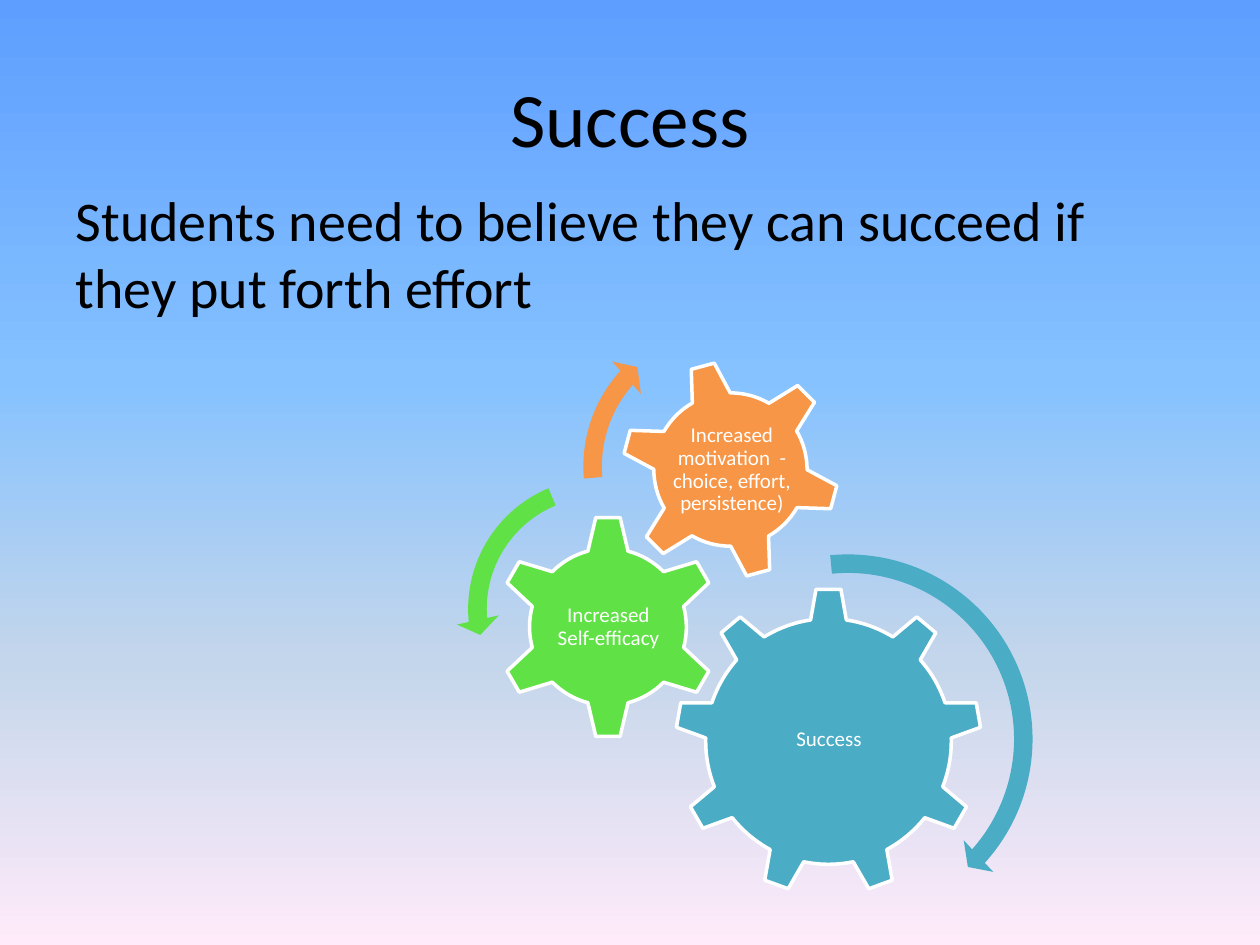
from copy import deepcopy

from pptx import Presentation
from pptx.dml.color import RGBColor as Rgb
from pptx.enum.shapes import MSO_SHAPE as Kind
from pptx.enum.text import MSO_ANCHOR as Anchor, PP_ALIGN as Align
from pptx.oxml.ns import qn
from pptx.oxml.xmlchemy import OxmlElement as Node
from pptx.util import Emu, Pt

SCALE = 914400 / 126
FONT = "Calibri"
BLACK = Rgb(0x00, 0x00, 0x00)
WHITE = Rgb(0xFF, 0xFF, 0xFF)
TEAL = Rgb(0x4B, 0xAC, 0xC6)
GREEN = Rgb(0x60, 0xE1, 0x46)
ORANGE = Rgb(0xF7, 0x96, 0x46)
SKY = [
    (0, Rgb(0x5E, 0x9E, 0xFF)),
    (0.4, Rgb(0x85, 0xC2, 0xFF)),
    (0.7, Rgb(0xC4, 0xD6, 0xEB)),
    (1, Rgb(0xFF, 0xEB, 0xFA)),
]

# kind, colour, turn, box in the diagram, label box in the gear, label
GEARS = [
    (Kind.GEAR_9, TEAL, 0, (219, 276, 307, 307), (62, 72, 184, 159), "Success"),
    (Kind.GEAR_6, GREEN, 0, (40, 203, 224, 224), (57, 57, 111, 111),
     "Increased Self-efficacy"),
    (Kind.GEAR_6, ORANGE, 345, (165, 48, 219, 219), (49, 48, 124, 124),
     "Increased motivation  - choice, effort, persistence)"),
]

ARROWS = [
    (Kind.CIRCULAR_ARROW, TEAL, (195, 230, 394, 394),
     (0.047, 2.99, 25.131, 158.679, 0.055)),
    (Kind.LEFT_CIRCULAR_ARROW, GREEN, (0, 154, 286, 286),
     (0.065, 4.3, 104.891, 148.378, 0.075)),
    (Kind.CIRCULAR_ARROW, ORANGE, (115, 0, 309, 309),
     (0.06, 3.941, 133.138, 105.082, 0.07)),
]


def px(num):
    return Emu(round(num * SCALE))


def emu(box):
    return [px(num) for num in box]


def shift(box, part):
    return box[0] + part[0], box[1] + part[1], part[2], part[3]


def place(shape, box):
    shape.left, shape.top, shape.width, shape.height = emu(box)


def write(para, text, size, color):
    run = para.add_run()
    run.text = text
    run.font.name = FONT
    run.font.size = Pt(size)
    run.font.color.rgb = color


def paint(slide):
    fill = slide.background.fill
    fill.gradient()
    fill.gradient_angle = 270
    stops = slide.element.find(".//" + qn("a:gsLst"))
    while len(stops) < len(SKY):
        stops.append(deepcopy(stops[0]))
    for stop, (pos, color) in zip(fill.gradient_stops, SKY):
        stop.position = pos
        stop.color.rgb = color


def title(slide, box):
    shape = slide.shapes.title
    place(shape, box)
    frame = shape.text_frame
    frame.vertical_anchor = Anchor.MIDDLE
    para = frame.paragraphs[0]
    para.alignment = Align.CENTER
    write(para, "Success", 44, BLACK)


def body(slide, box):
    shape = slide.placeholders[1]
    place(shape, box)
    para = shape.text_frame.paragraphs[0]
    props = para._p.get_or_add_pPr()
    props.set("marL", "0")
    props.set("indent", "0")
    props.append(Node("a:buNone"))
    write(para, "Students need to believe they can succeed if they put forth effort",
          32, BLACK)


def solid(group, kind, box, color):
    shape = group.shapes.add_shape(kind, *emu(box))
    shape.shadow.inherit = False
    shape.fill.solid()
    shape.fill.fore_color.rgb = color
    return shape


def label(group, box, text):
    frame = group.shapes.add_textbox(*emu(box)).text_frame
    frame.word_wrap = True
    frame.vertical_anchor = Anchor.MIDDLE
    frame.margin_left = frame.margin_right = px(2)
    frame.margin_top = frame.margin_bottom = px(2)
    para = frame.paragraphs[0]
    para.alignment = Align.CENTER
    para.line_spacing = 0.9
    write(para, text, 12, WHITE)


def gear(group, box, kind, color, turn, inner, text):
    shape = solid(group, kind, box, color)
    shape.rotation = turn
    shape.line.color.rgb = WHITE
    shape.line.width = Pt(2)
    label(group, shift(box, inner), text)


def arrow(group, box, kind, color, bends):
    shape = solid(group, kind, box, color)
    shape.line.fill.background()
    for num, bend in enumerate(bends):
        shape.adjustments[num] = bend


def gears(slide, box):
    group = slide.shapes.add_group_shape()
    for kind, color, turn, part, inner, text in GEARS:
        gear(group, shift(box, part), kind, color, turn, inner, text)
    for kind, color, part, bends in ARROWS:
        arrow(group, shift(box, part), kind, color, bends)


def main():
    deck = Presentation()
    deck.slide_width, deck.slide_height = px(1260), px(945)
    slide = deck.slides.add_slide(deck.slide_layouts[1])
    paint(slide)
    title(slide, (63, 38, 1134, 158))
    body(slide, (63, 179, 1134, 665))
    gears(slide, (456, 312, 589, 624))
    deck.save("out.pptx")


if __name__ == "__main__":
    main()
